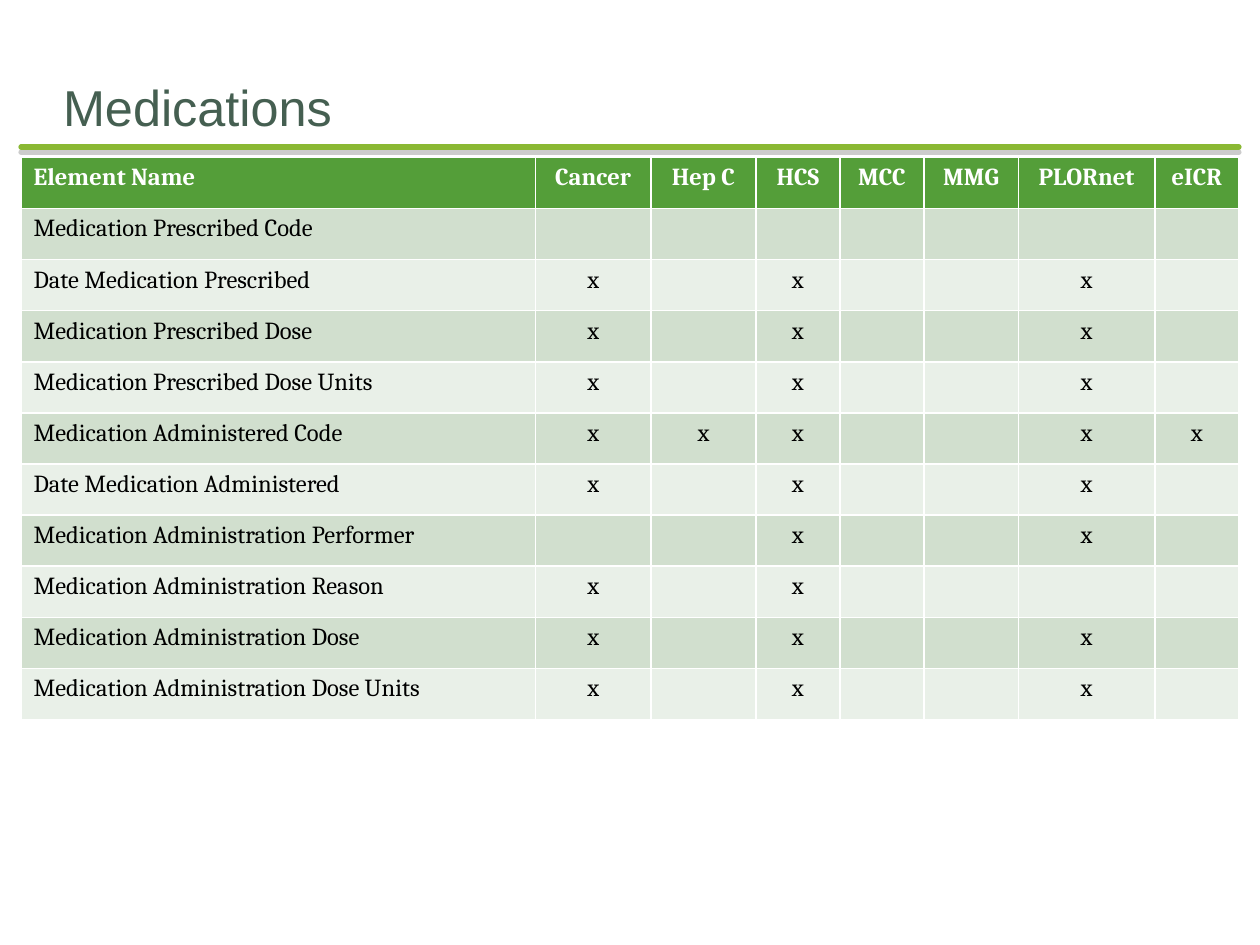
from lxml.etree import SubElement
from pptx import Presentation
from pptx.dml.color import RGBColor
from pptx.enum.shapes import MSO_CONNECTOR
from pptx.enum.text import MSO_ANCHOR, MSO_AUTO_SIZE, PP_ALIGN
from pptx.oxml.ns import qn
from pptx.util import Inches, Pt

COLORS = {
    "title": "455F51",
    "rule": "8AB833",
    "shadow": "808080",
    "header": "549E39",
    "odd": "D1DFCE",
    "even": "E9F0E8",
    "white": "FFFFFF",
    "black": "000000",
}
UNIT = Inches(1) // 12
ROW_HEIGHT = Inches(4.46 / 11)


def write(frame, text, size=14, font="Cambria", color="black", bold=False, align=PP_ALIGN.LEFT):
    paragraph = frame.paragraphs[0]
    paragraph.alignment = align
    run = paragraph.add_run()
    run.text = text
    run.font.size = Pt(size)
    run.font.name = font
    run.font.bold = bold
    run.font.color.rgb = RGBColor.from_string(COLORS[color])


deck = Presentation()
deck.slide_width, deck.slide_height = 120 * UNIT, 90 * UNIT
slide = deck.slides.add_slide(deck.slide_layouts[5])

heading = slide.shapes.title
heading.left, heading.top, heading.width, heading.height = 6 * UNIT, 6 * UNIT, 108 * UNIT, 7 * UNIT
heading_frame = heading.text_frame
heading_frame.auto_size = MSO_AUTO_SIZE.NONE
heading_frame.vertical_anchor = MSO_ANCHOR.BOTTOM
heading_frame.margin_left = heading_frame.margin_right = heading_frame.margin_bottom = 0
heading_frame.margin_top = Inches(0.05)
write(heading_frame, "Medications", size=28.8, font="Arial", color="title")

rule = slide.shapes.add_connector(MSO_CONNECTOR.STRAIGHT, 2 * UNIT, 14 * UNIT, 118 * UNIT, 14 * UNIT)
rule.line.color.rgb = RGBColor.from_string(COLORS["rule"])
rule.line.width = Pt(3)
rule_properties = rule.line._get_or_add_ln().getparent()
rule.line._get_or_add_ln().set("cap", "rnd")
effects = SubElement(rule_properties, qn("a:effectLst"))
shadow = SubElement(effects, qn("a:outerShdw"), dist=str(Pt(3)), dir="5400000", rotWithShape="0")
shadow_color = SubElement(shadow, qn("a:srgbClr"), val=COLORS["shadow"])
SubElement(shadow_color, qn("a:alpha"), val="40000")

sources = ["Cancer", "Hep C", "HCS", "MCC", "MMG", "PLORnet", "eICR"]
column_units = [49, 11, 10, 8, 8, 9, 13, 8]
elements = [
    ("Medication Prescribed Code", []),
    ("Date Medication Prescribed", ["Cancer", "HCS", "PLORnet"]),
    ("Medication Prescribed Dose", ["Cancer", "HCS", "PLORnet"]),
    ("Medication Prescribed Dose Units", ["Cancer", "HCS", "PLORnet"]),
    ("Medication Administered Code", ["Cancer", "Hep C", "HCS", "PLORnet", "eICR"]),
    ("Date Medication Administered", ["Cancer", "HCS", "PLORnet"]),
    ("Medication Administration Performer", ["HCS", "PLORnet"]),
    ("Medication Administration Reason", ["Cancer", "HCS"]),
    ("Medication Administration Dose", ["Cancer", "HCS", "PLORnet"]),
    ("Medication Administration Dose Units", ["Cancer", "HCS", "PLORnet"]),
]
rows = [["Element Name"] + sources]
for element, users in elements:
    rows.append([element] + ["x" if source in users else "" for source in sources])

coverage = slide.shapes.add_table(
    len(rows), len(column_units), 2 * UNIT, 15 * UNIT, sum(column_units) * UNIT, len(rows) * ROW_HEIGHT
).table
for column, units in zip(coverage.columns, column_units):
    column.width = units * UNIT

for row_index, row in enumerate(rows):
    coverage.rows[row_index].height = ROW_HEIGHT
    is_header = row_index == 0
    band = "header" if is_header else "odd" if row_index % 2 else "even"
    for column_index, entry in enumerate(row):
        cell = coverage.cell(row_index, column_index)
        cell.fill.solid()
        cell.fill.fore_color.rgb = RGBColor.from_string(COLORS[band])
        if entry:
            write(
                cell.text_frame,
                entry,
                color="white" if is_header else "black",
                bold=is_header,
                align=PP_ALIGN.CENTER if column_index else PP_ALIGN.LEFT,
            )

deck.save("out.pptx")
